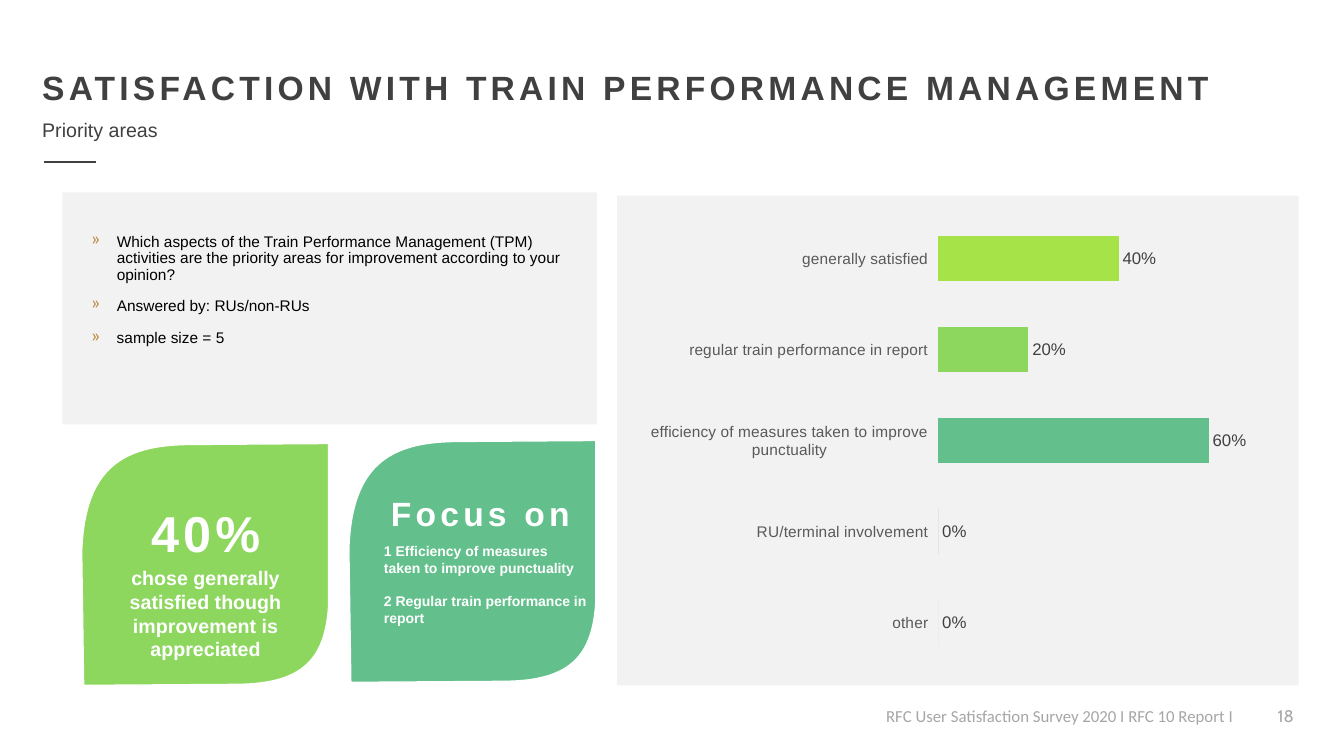
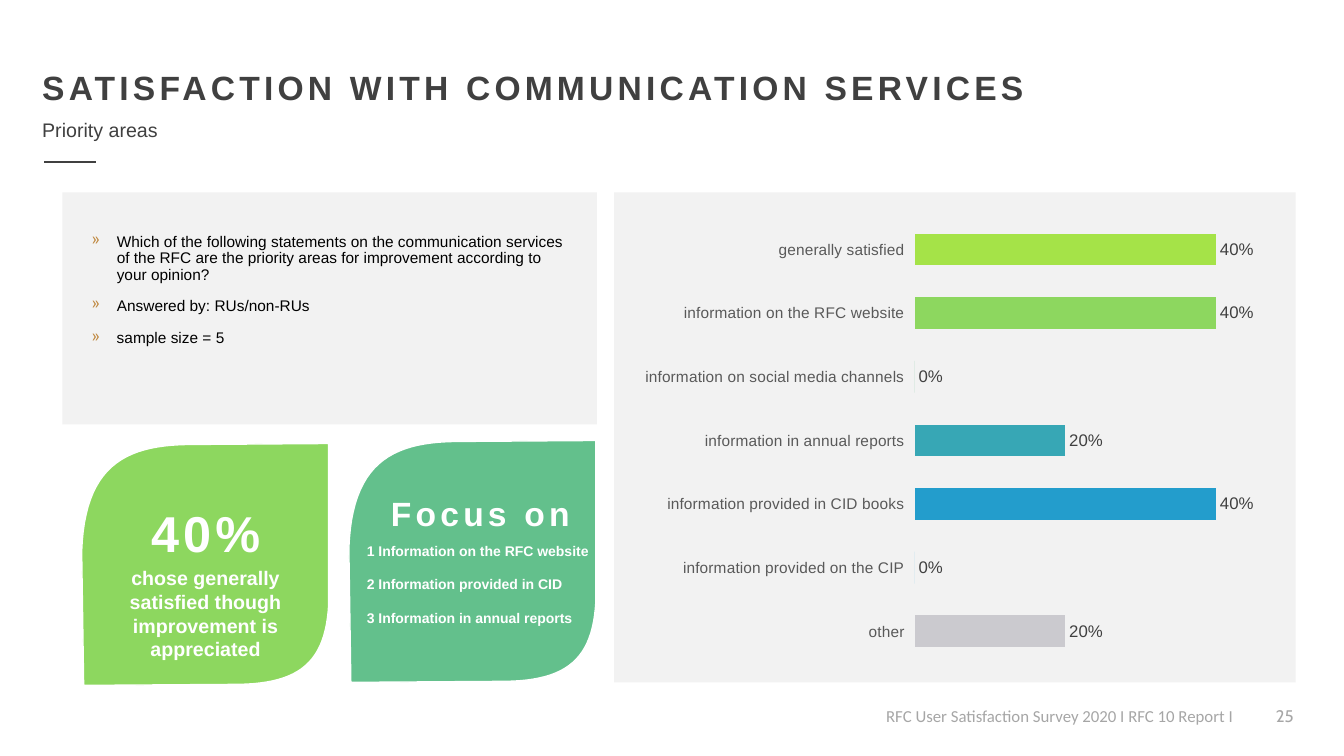
"""Build two survey slides on priority areas for improvement."""
from copy import deepcopy
from dataclasses import dataclass

from lxml import etree
from pptx import Presentation
from pptx import util as u
from pptx.chart.data import CategoryChartData
from pptx.dml.color import RGBColor
from pptx.enum import chart as charts, shapes, text
from pptx.oxml import parse_xml
from pptx.oxml.ns import nsdecls, qn

PX = 9144
WHITE = RGBColor(0xFF, 0xFF, 0xFF)
BLACK = RGBColor(0, 0, 0)
DARK = RGBColor(0x40, 0x40, 0x40)
LABEL_GREY = RGBColor(0x59, 0x59, 0x59)
FOOTER_GREY = RGBColor(0xA6, 0xA6, 0xA6)
PANEL_GREY = RGBColor(0xF2, 0xF2, 0xF2)
OTHER_GREY = RGBColor(0xCB, 0xCA, 0xCF)
GOLD = "BF873D"
NAVY = RGBColor(0x0B, 0x26, 0x59)
LIME = RGBColor(0xA5, 0xE3, 0x48)
GREEN = RGBColor(0x8D, 0xD7, 0x5F)
TEAL = RGBColor(0x63, 0xC0, 0x8C)
BAR_COLOURS = [LIME, GREEN, TEAL, RGBColor(0x37, 0xA7, 0xB5),
               RGBColor(0x23, 0x9D, 0xCC), RGBColor(0x74, 0xC7, 0xE9)]

LEFT = text.PP_ALIGN.LEFT
CENTER = text.PP_ALIGN.CENTER
RIGHT = text.PP_ALIGN.RIGHT

Box = tuple[int, int, int, int]


@dataclass(frozen=True)
class Style:
    size: int
    colour: RGBColor
    name: str = "Arial"
    bold: bool = False
    tracking: int = 0
    align: text.PP_ALIGN = LEFT
    wrap: bool = True
    bullet: str = ""
    line_spacing: float = 1.0
    gap: int = 0


TITLE = Style(24, DARK, bold=True, tracking=300)
SUBTITLE = Style(14, DARK, wrap=False)
QUESTION = Style(11, BLACK, bullet="»", line_spacing=0.9, gap=10)
FOCUS_HEAD = Style(24, WHITE, bold=True, tracking=300, align=CENTER, wrap=False)
FOCUS_ITEM = Style(10, WHITE, bold=True, gap=12)
SHARE = Style(36, WHITE, bold=True, tracking=300, align=CENTER, wrap=False)
SHARE_NOTE = Style(14, WHITE, bold=True, align=CENTER)
FOOTER = Style(12, FOOTER_GREY, name="Calibri", wrap=False)
PAGE = Style(12, FOOTER_GREY, name="Cabin", align=RIGHT)


@dataclass(frozen=True)
class Survey:
    page: int
    title: str
    question: str
    focus: list[str]
    focus_box: Box
    panel: Box
    results: dict[str, float]
    plot: tuple[float, ...] = ()


SURVEYS = [
    Survey(
        18, "SATISFACTION WITH TRAIN PERFORMANCE MANAGEMENT",
        "Which aspects of the Train Performance Management (TPM) activities are "
        "the priority areas for improvement according to your opinion?",
        ["1 Efficiency of measures\ntaken to improve punctuality",
         "2 Regular train performance in report"],
        (371, 533, 221, 111), (612, 194, 676, 486),
        {"generally satisfied": 0.4,
         "regular train performance in report": 0.2,
         "efficiency of measures taken to improve punctuality": 0.6,
         "RU/terminal involvement": 0,
         "other": 0}),
    Survey(
        25, "SATISFACTION WITH COMMUNICATION SERVICES",
        "Which of the following statements on the communication services of the "
        "RFC are the priority areas for improvement according to your opinion?",
        ["1 Information on the RFC website",
         "2 Information provided in CID",
         "3 Information in annual reports"],
        (354, 533, 243, 111), (609, 191, 676, 486),
        {"generally satisfied": 0.4,
         "information on the RFC website": 0.4,
         "information on social media channels": 0,
         "information in annual reports": 0.2,
         "information provided in CID books": 0.4,
         "information provided on the CIP": 0,
         "other": 0.2},
        (0.44, 0.03, 0.54, 0.94)),
]


def emu(box: Box) -> list[u.Emu]:
    return [u.Emu(length * PX) for length in box]


def set_font(font, size: int, colour: RGBColor, name: str = "Arial", bold: bool = False) -> None:
    for attribute, value in {"size": u.Pt(size), "name": name, "bold": bold}.items():
        setattr(font, attribute, value)
    font.color.rgb = colour


def add_bullet(paragraph, mark: str) -> None:
    properties = paragraph._p.get_or_add_pPr()
    properties.set("marL", "228600")
    properties.set("indent", "-228600")
    colour = etree.SubElement(properties, qn("a:buClr"))
    etree.SubElement(colour, qn("a:srgbClr")).set("val", GOLD)
    etree.SubElement(properties, qn("a:buChar")).set("char", mark)


def add_text(slide, box: Box, lines: list[str], style: Style) -> None:
    frame = slide.shapes.add_textbox(*emu(box)).text_frame
    frame.word_wrap = style.wrap
    for index, line in enumerate(lines):
        paragraph = frame.add_paragraph() if index else frame.paragraphs[0]
        paragraph.text = line
        formats = {"alignment": style.align, "line_spacing": style.line_spacing,
                   "space_before": u.Pt(style.gap if index else 0)}
        for attribute, value in formats.items():
            setattr(paragraph, attribute, value)
        if style.bullet:
            add_bullet(paragraph, style.bullet)
        for run in paragraph.runs:
            set_font(run.font, style.size, style.colour, style.name, style.bold)
            if style.tracking:
                run._r.get_or_add_rPr().set("spc", str(style.tracking))
        for line_break in paragraph._p.findall(qn("a:br")):
            line_break.append(deepcopy(paragraph.runs[0]._r.rPr))


def add_panel(slide, box: Box) -> None:
    panel = slide.shapes.add_shape(shapes.MSO_SHAPE.RECTANGLE, *emu(box))
    panel.shadow.inherit = False
    panel.fill.solid()
    panel.fill.fore_color.rgb = PANEL_GREY
    panel.line.fill.background()


def curve(*controls: tuple[int, int], steps: int = 24) -> list[tuple[float, float]]:
    points = []
    for step in range(1, steps + 1):
        t = step / steps
        weights = ((1 - t) ** 3, 3 * t * (1 - t) ** 2, 3 * t * t * (1 - t), t ** 3)
        points.append(tuple(sum(w * c[axis] for w, c in zip(weights, controls))
                            for axis in (0, 1)))
    return points


def add_leaf(slide, left: int, top: int, colour: RGBColor) -> None:
    outline = [(2, 240), (0, 107),
               *curve((0, 107), (3, 24), (41, 2), (105, 1)),
               (245, 0), (245, 160),
               *curve((245, 160), (242, 217), (216, 238), (156, 239))]
    points = [(round((left + x) * PX), round((top + y) * PX)) for x, y in outline]
    builder = slide.shapes.build_freeform(*points[0], scale=1.0)
    builder.add_line_segments(points[1:], close=True)
    leaf = builder.convert_to_shape()
    leaf.shadow.inherit = False
    leaf.fill.solid()
    leaf.fill.fore_color.rgb = colour
    leaf.line.color.rgb = WHITE
    leaf.line.width = u.Pt(1)


def add_rule(slide) -> None:
    rule = slide.shapes.add_connector(shapes.MSO_CONNECTOR.STRAIGHT, *emu((44, 161, 95, 161)))
    rule.line.color.rgb = DARK
    rule.line.width = u.Pt(1.5)
    etree.SubElement(rule._element.spPr, qn("a:effectLst"))


def place_plot(chart, plot: tuple[float, ...]) -> None:
    area = chart._chartSpace.chart.plotArea
    for layout in area.findall(qn("c:layout")):
        area.remove(layout)
    modes = '<c:layoutTarget val="inner"/><c:xMode val="edge"/><c:yMode val="edge"/>'
    sizes = "".join(f'<c:{key} val="{value}"/>' for key, value in zip("xywh", plot))
    area.insert(0, parse_xml(f'<c:layout {nsdecls("c")}><c:manualLayout>'
                             f'{modes}{sizes}</c:manualLayout></c:layout>'))


def add_results(slide, survey: Survey) -> None:
    data = CategoryChartData(number_format="0%")
    data.categories = list(survey.results)
    data.add_series("Series 1", list(survey.results.values()))
    chart = slide.shapes.add_chart(charts.XL_CHART_TYPE.BAR_CLUSTERED,
                                   *emu((633, 202, 623, 470)), data).chart
    chart.has_legend = chart.has_title = False
    set_font(chart.font, 10, BLACK)
    categories = chart.category_axis
    categories.reverse_order = True
    categories.has_major_gridlines = False
    categories.format.line.fill.background()
    set_font(categories.tick_labels.font, 11, LABEL_GREY)
    chart.value_axis.has_major_gridlines = False
    chart.value_axis.visible = False

    bars = chart.plots[0]
    bars.gap_width = 100
    bars.vary_by_categories = False
    series = bars.series[0]
    series.format.fill.solid()
    series.format.fill.fore_color.rgb = NAVY
    colours = BAR_COLOURS[:len(survey.results) - 1] + [OTHER_GREY]
    for index, colour in enumerate(colours):
        fill = series.points[index].format.fill
        fill.solid()
        fill.fore_color.rgb = colour
    labels = series.data_labels
    formats = {"show_value": True, "number_format": "0%", "number_format_is_linked": False,
               "position": charts.XL_LABEL_POSITION.OUTSIDE_END}
    for attribute, value in formats.items():
        setattr(labels, attribute, value)
    set_font(labels.font, 12, DARK)
    if survey.plot:
        place_plot(chart, survey.plot)


def add_frame(slide, survey: Survey) -> None:
    add_text(slide, (1231, 695, 62, 40), [str(survey.page)], PAGE)
    add_text(slide, (869, 695, 385, 30),
             ["RFC User Satisfaction Survey 2020 I RFC 10 Report I"], FOOTER)
    add_rule(slide)
    add_text(slide, (32, 61, 1238, 50), [survey.title], TITLE)
    add_text(slide, (32, 112, 136, 34), ["Priority areas"], SUBTITLE)


def add_survey(slide, survey: Survey) -> None:
    add_frame(slide, survey)
    add_panel(slide, (62, 191, 530, 230))
    add_panel(slide, survey.panel)
    add_text(slide, (81, 227, 495, 82), [survey.question, "Answered by: RUs/non-RUs"], QUESTION)
    add_text(slide, (81, 323, 227, 33), ["sample size = 5"], QUESTION)
    add_results(slide, survey)
    add_leaf(slide, 81, 440, GREEN)
    add_text(slide, (137, 493, 134, 71), ["40%"], SHARE)
    add_text(slide, (81, 557, 246, 104),
             ["chose generally satisfied though improvement is appreciated"], SHARE_NOTE)
    add_leaf(slide, 346, 437, TEAL)
    add_text(slide, (375, 484, 203, 50), ["Focus on"], FOCUS_HEAD)
    add_text(slide, survey.focus_box, survey.focus, FOCUS_ITEM)


def main() -> None:
    deck = Presentation()
    deck.slide_width, deck.slide_height = u.Emu(1333 * PX), u.Emu(750 * PX)
    for survey in SURVEYS:
        add_survey(deck.slides.add_slide(deck.slide_layouts[6]), survey)
    deck.save("out.pptx")


if __name__ == "__main__":
    main()
